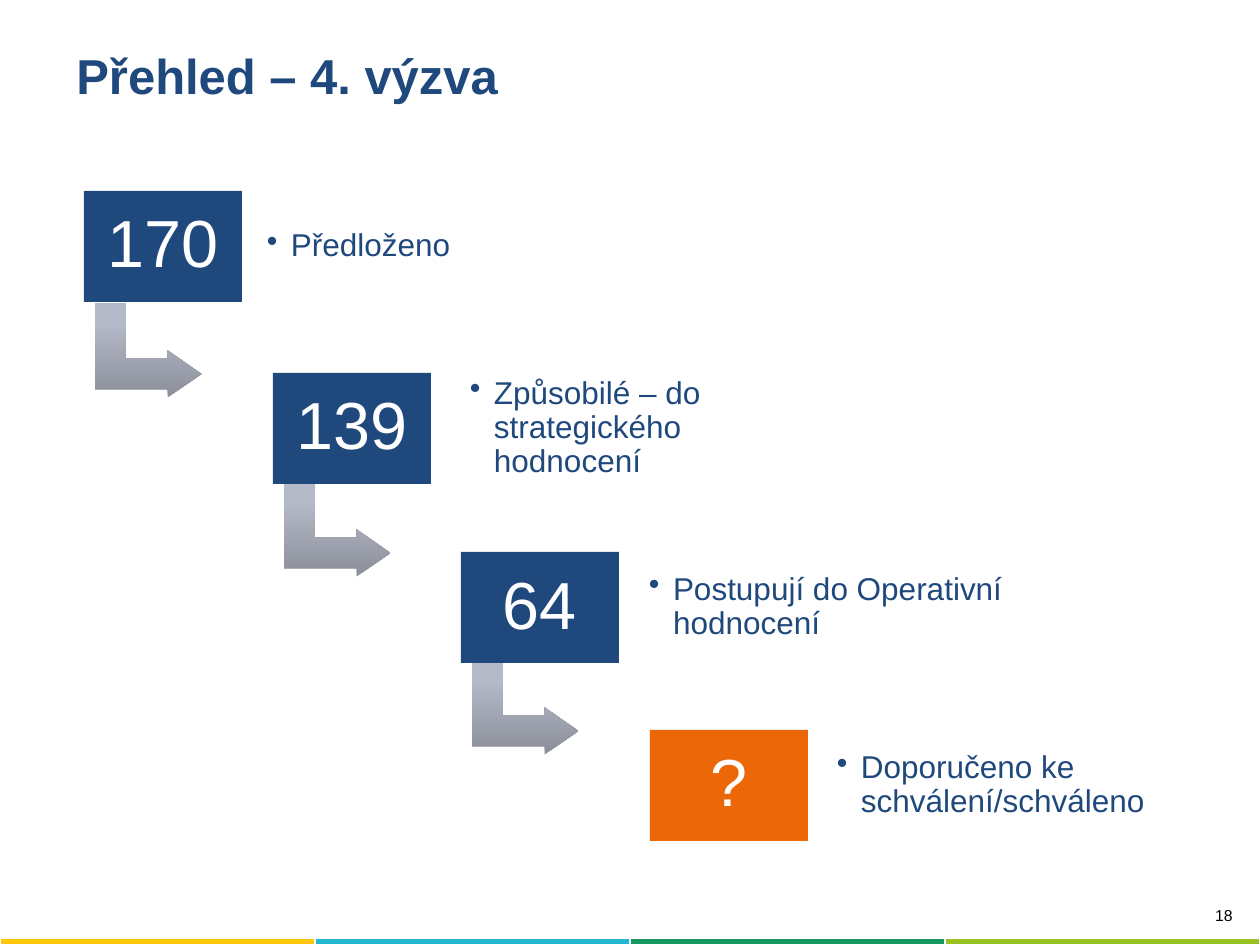
from dataclasses import dataclass

from lxml import etree
from pptx import Presentation
from pptx.dml.color import RGBColor
from pptx.enum.shapes import MSO_SHAPE
from pptx.enum.text import MSO_ANCHOR, PP_ALIGN
from pptx.oxml.ns import qn
from pptx.util import Emu, Pt

RECT, BENT_ARROW = MSO_SHAPE.RECTANGLE, MSO_SHAPE.BENT_UP_ARROW
TOP, MIDDLE = MSO_ANCHOR.TOP, MSO_ANCHOR.MIDDLE
LEFT, CENTER, RIGHT = PP_ALIGN.LEFT, PP_ALIGN.CENTER, PP_ALIGN.RIGHT
PX_PER_INCH = 126


@dataclass(frozen=True)
class Theme:
    font: str = "Arial"
    navy: str = "1F497D"
    orange: str = "EC6707"
    white: str = "FFFFFF"
    black: str = "000000"
    stripe: tuple = ("FDC609", "21B7CF", "159960", "98C222")
    arrow: tuple = ((0, "8C8F9A"), (80, "B5BAC8"), (100, "B6BBC9"))
    title_size: int = 28
    number_size: int = 38
    label_size: int = 18
    page_size: int = 9


@dataclass(frozen=True)
class Step:
    number: str
    label: str
    x: int
    y: int
    label_x: int
    label_w: int
    color: str
    arrow_y: int | None = None


THEME = Theme()
BOX_W, BOX_H = 158, 111
LABEL_H = 89
ARROW_W, ARROW_H, ARROW_DX = 94, 107, 17
STRIPE_H = 7
STEPS = (
    Step("170", "Předloženo", 84, 191, 258, 514, THEME.navy, 297),
    Step("139", "Způsobilé – do strategického hodnocení",
         273, 373, 461, 355, THEME.navy, 476),
    Step("64", "Postupují do Operativní hodnocení",
         461, 552, 640, 398, THEME.navy, 654),
    Step("?", "Doporučeno ke schválení/schváleno",
         650, 730, 828, 347, THEME.orange),
)


def px(n: int) -> Emu:
    return Emu(round(n * 914400 / PX_PER_INCH))


def rgb(color: str) -> RGBColor:
    return RGBColor.from_string(color)


def write(sp, text: str, *, size: int, color: str, bold: bool = False,
          align=LEFT, anchor=MIDDLE, inset: int | None = None,
          spacing: float | None = None, bullet_indent: int = 0) -> None:
    tf = sp.text_frame
    tf.word_wrap = True
    tf.vertical_anchor = anchor
    if inset is not None:
        tf.margin_left = tf.margin_right = px(inset)
        tf.margin_top = tf.margin_bottom = px(inset)
    p = tf.paragraphs[0]
    if bullet_indent:
        pPr = p._p.get_or_add_pPr()
        pPr.set("marL", str(px(bullet_indent)))
        pPr.set("indent", str(-px(bullet_indent)))
        etree.SubElement(pPr, qn("a:buChar")).set("char", "•")
    p.alignment = align
    p.line_spacing = spacing
    r = p.add_run()
    r.text = text
    r.font.name = THEME.font
    r.font.size = Pt(size)
    r.font.bold = bold
    r.font.color.rgb = rgb(color)


def add_text(slide, x: int, y: int, w: int, h: int, text: str, **fmt) -> None:
    write(slide.shapes.add_textbox(px(x), px(y), px(w), px(h)), text, **fmt)


def add_shape(slide, kind, x: int, y: int, w: int, h: int):
    sp = slide.shapes.add_shape(kind, px(x), px(y), px(w), px(h))
    sp.shadow.inherit = False
    sp.line.fill.background()
    return sp


def add_arrow(slide, x: int, y: int) -> None:
    sp = add_shape(slide, BENT_ARROW, x, y, ARROW_W, ARROW_H)
    sp.rotation = 90
    for i, value in enumerate((0.33, 0.25, 0.36)):
        sp.adjustments[i] = value
    sp.fill.gradient()
    grad = sp._element.spPr.find(qn("a:gradFill"))
    grad.set("rotWithShape", "0")
    stops = grad.find(qn("a:gsLst"))
    for gs in list(stops):
        stops.remove(gs)
    for pos, color in THEME.arrow:
        gs = etree.SubElement(stops, qn("a:gs"), pos=str(pos * 1000))
        etree.SubElement(gs, qn("a:srgbClr"), val=color)
    lin = grad.find(qn("a:lin"))
    lin.set("ang", str(270 * 60000))
    lin.set("scaled", "0")


def add_step(slide, step: Step) -> None:
    if step.arrow_y is not None:
        add_arrow(slide, step.x + ARROW_DX, step.arrow_y)
    sp = add_shape(slide, RECT, step.x, step.y, BOX_W, BOX_H)
    sp.fill.solid()
    sp.fill.fore_color.rgb = rgb(step.color)
    write(sp, step.number, size=THEME.number_size, color=THEME.white,
          align=CENTER, inset=20, spacing=0.9)
    add_text(slide, step.label_x, step.y + (BOX_H - LABEL_H) // 2,
             step.label_w, LABEL_H, step.label, size=THEME.label_size,
             color=THEME.navy, inset=9, spacing=0.9, bullet_indent=24)


def add_stripe(slide, w: int, h: int) -> None:
    table = slide.shapes.add_table(1, len(THEME.stripe), 0, px(h - STRIPE_H),
                                   px(w), px(STRIPE_H)).table
    for cell, color in zip(table.iter_cells(), THEME.stripe):
        cell.fill.solid()
        cell.fill.fore_color.rgb = rgb(color)
        cell.margin_left = cell.margin_right = 0
        cell.margin_top = cell.margin_bottom = 0
        p = cell.text_frame.paragraphs[0]
        etree.SubElement(p._p, qn("a:endParaRPr"), sz="100")


def main() -> None:
    w, h = 1260, 945
    prs = Presentation()
    prs.slide_width, prs.slide_height = px(w), px(h)
    slide = prs.slides.add_slide(prs.slide_layouts[6])
    add_stripe(slide, w, h)
    add_text(slide, 997, 900, 248, 39, "18", size=THEME.page_size,
             color=THEME.black, align=RIGHT, anchor=TOP)
    add_text(slide, 64, 36, 1134, 77, "Přehled – 4. výzva",
             size=THEME.title_size, color=THEME.navy, bold=True)
    for step in STEPS:
        add_step(slide, step)
    prs.save("out.pptx")


if __name__ == "__main__":
    main()
